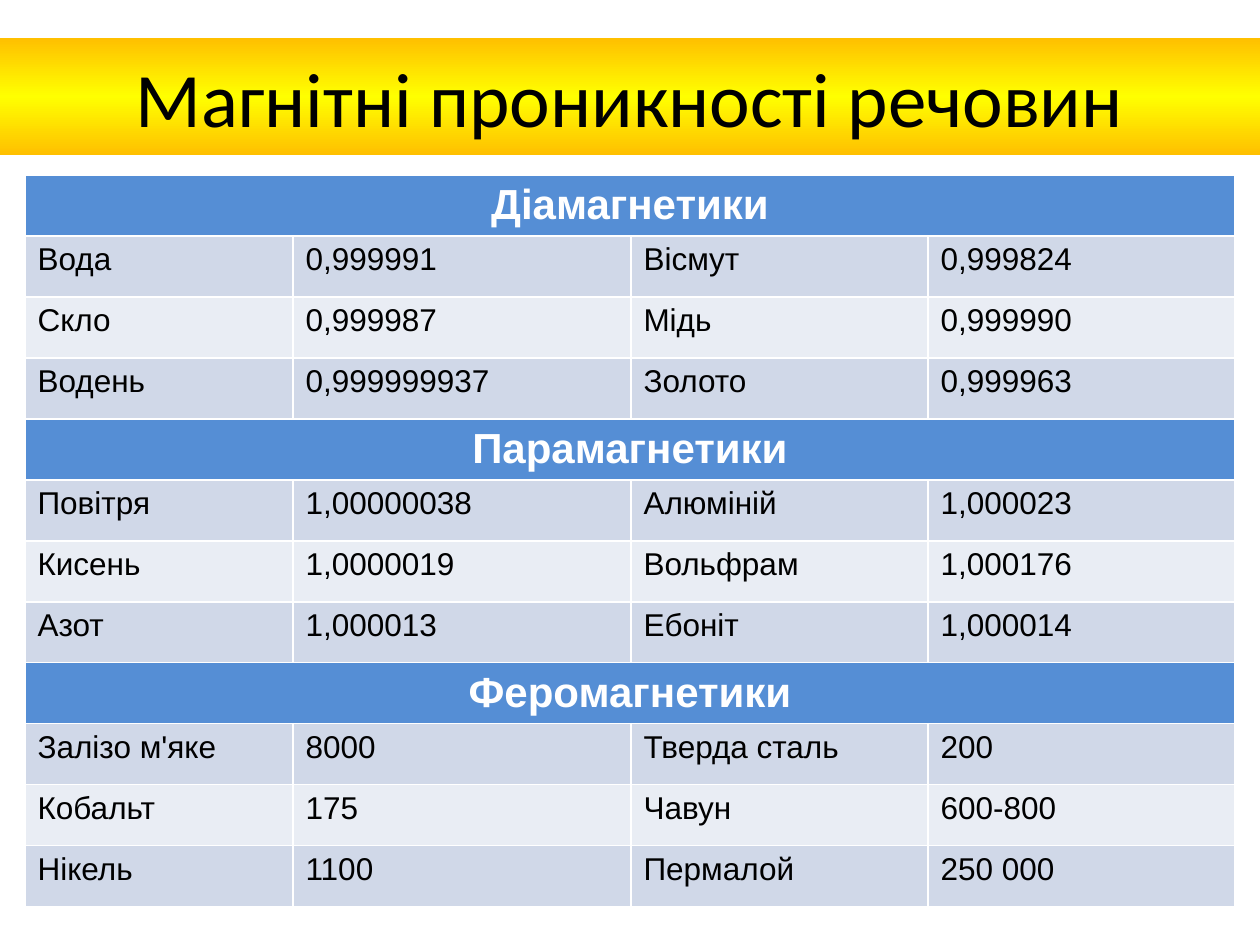
"""Builds a slide with a table of magnetic permeabilities."""
from copy import deepcopy

from pptx import Presentation
from pptx import util as u
from pptx.dml.color import RGBColor
from pptx.enum import text
from pptx.oxml.ns import qn

PX = u.Inches(1) // 126
BLACK = RGBColor(0x00, 0x00, 0x00)
WHITE = RGBColor(0xFF, 0xFF, 0xFF)
ORANGE = RGBColor(0xFF, 0xC0, 0x00)
YELLOW = RGBColor(0xFF, 0xFF, 0x00)
BLUE = RGBColor(0x55, 0x8E, 0xD5)
DARK_BAND = RGBColor(0xD0, 0xD8, 0xE8)
LIGHT_BAND = RGBColor(0xE9, 0xED, 0xF4)

COLUMN_WIDTHS = (268, 338, 297, 307)
ROW_HEIGHT = 61
SUBSTANCES = {
    "Діамагнетики": (
        ("Вода", "0,999991", "Вісмут", "0,999824"),
        ("Скло", "0,999987", "Мідь", "0,999990"),
        ("Водень", "0,999999937", "Золото", "0,999963"),
    ),
    "Парамагнетики": (
        ("Повітря", "1,00000038", "Алюміній", "1,000023"),
        ("Кисень", "1,0000019", "Вольфрам", "1,000176"),
        ("Азот", "1,000013", "Ебоніт", "1,000014"),
    ),
    "Феромагнетики": (
        ("Залізо м'яке", "8000", "Тверда сталь", "200"),
        ("Кобальт", "175", "Чавун", "600-800"),
        ("Нікель", "1100", "Пермалой", "250 000"),
    ),
}


class SlideBuilder:
    """Holds the text style and the current slide."""

    title_font, table_font = "Calibri", "Arial"
    title_size, heading_size, body_size = 44, 24, 18

    def __init__(self, presentation):
        self.slide = presentation.slides.add_slide(presentation.slide_layouts[5])

    def add_words(self, frame, words, font, size, color, bold=False, centered=False):
        paragraph = frame.paragraphs[0]
        paragraph.alignment = text.PP_ALIGN.CENTER if centered else text.PP_ALIGN.LEFT
        run = paragraph.add_run()
        run.text = words
        run.font.name = font
        run.font.size = u.Pt(size)
        run.font.bold = bold
        run.font.color.rgb = color

    def title(self, words, left, top, width, height):
        shape = self.slide.shapes.title
        shape.left, shape.top = left * PX, top * PX
        shape.width, shape.height = width * PX, height * PX
        shape.fill.gradient()
        shape.fill.gradient_angle = 90
        stop_list = shape.element.spPr.find(qn("a:gradFill")).find(qn("a:gsLst"))
        stop_list.insert(1, deepcopy(stop_list[0]))
        stops = ((0, ORANGE), (0.5, YELLOW), (1, ORANGE))
        for stop, (position, color) in zip(shape.fill.gradient_stops, stops):
            stop.position = position
            stop.color.rgb = color
        shape.text_frame.vertical_anchor = text.MSO_ANCHOR.MIDDLE
        self.add_words(shape.text_frame, words, self.title_font, self.title_size,
                       BLACK, centered=True)

    def cell(self, cell, words, fill, **style):
        cell.fill.solid()
        cell.fill.fore_color.rgb = fill
        self.add_words(cell.text_frame, words, self.table_font, **style)

    def table(self, groups, left, top):
        row_count = sum(1 + len(rows) for rows in groups.values())
        table = self.slide.shapes.add_table(
            row_count, len(COLUMN_WIDTHS), left * PX, top * PX,
            sum(COLUMN_WIDTHS) * PX, row_count * ROW_HEIGHT * PX).table
        for column, width in zip(table.columns, COLUMN_WIDTHS):
            column.width = width * PX
        row_index = 0
        for heading, rows in groups.items():
            first = table.cell(row_index, 0)
            first.merge(table.cell(row_index, len(COLUMN_WIDTHS) - 1))
            self.cell(first, heading, BLUE, size=self.heading_size,
                      color=WHITE, bold=True, centered=True)
            for offset, row in enumerate(rows):
                row_index += 1
                band = LIGHT_BAND if offset % 2 else DARK_BAND
                for column_index, words in enumerate(row):
                    self.cell(table.cell(row_index, column_index), words, band,
                              size=self.body_size, color=BLACK)
            row_index += 1


def main():
    presentation = Presentation()
    presentation.slide_width, presentation.slide_height = 1260 * PX, 945 * PX
    builder = SlideBuilder(presentation)
    builder.title("Магнітні проникності речовин", 0, 38, 1260, 117)
    builder.table(SUBSTANCES, 25, 175)
    presentation.save("out.pptx")


if __name__ == "__main__":
    main()
